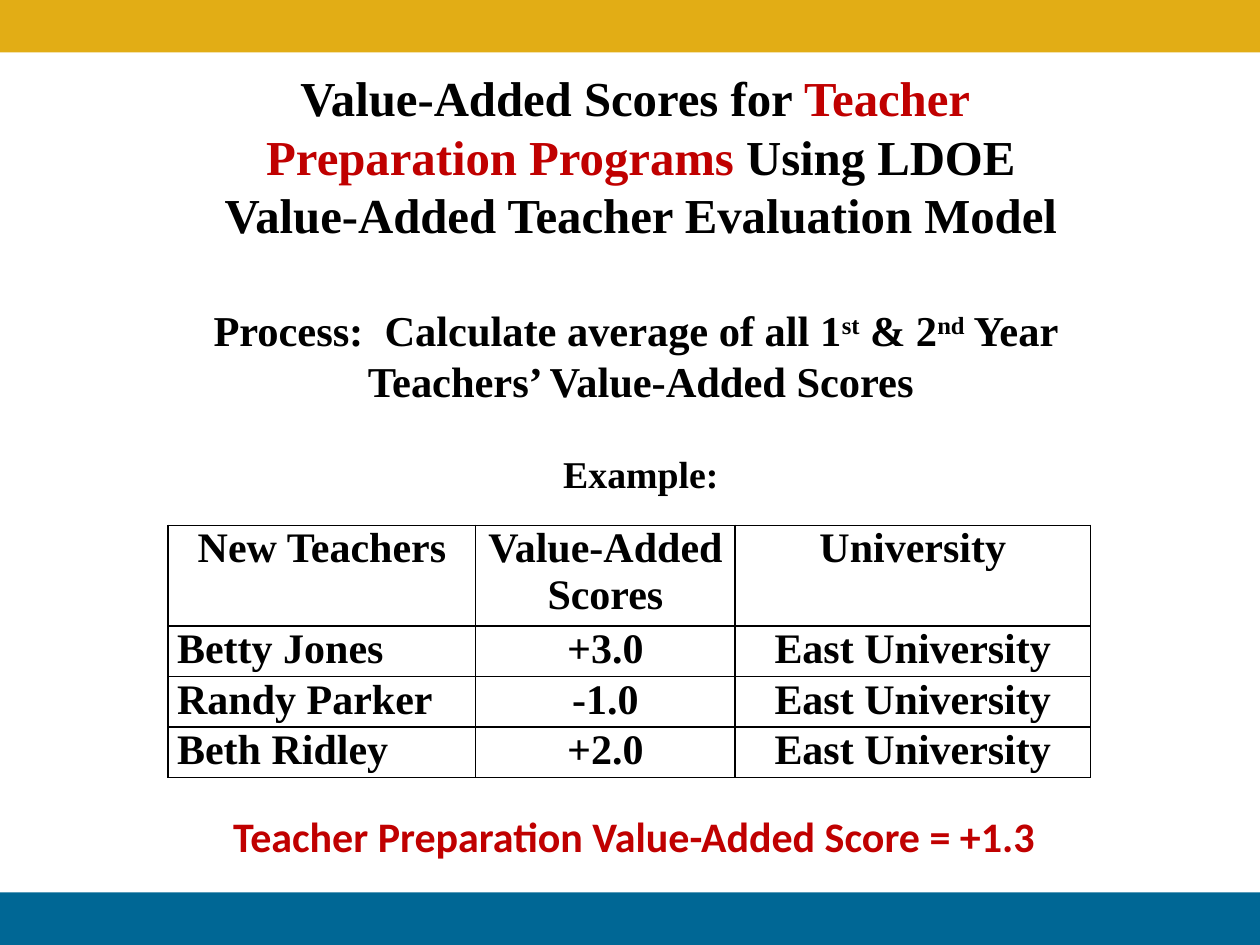
"""Build the slide on value-added scores for teacher preparation programs."""
from lxml import etree
from pptx import Presentation
from pptx.dml.color import RGBColor
from pptx.enum import shapes, text
from pptx.oxml import ns
from pptx.util import Cm, Pt

BLACK = RGBColor(0, 0, 0)
RED = RGBColor(0xC0, 0, 0)
GOLD = RGBColor(0xE2, 0xAD, 0x15)
BLUE = RGBColor(0, 0x67, 0x95)
WHITE = RGBColor(0xFF, 0xFF, 0xFF)
SERIF = "Times New Roman"
MID = text.PP_ALIGN.CENTER


def style(run, size, color=BLACK, face=SERIF):
    font = run.font
    font.name, font.size, font.bold = face, Pt(size), True
    font.color.rgb = color


def add_box(left, top, width, height):
    frame = slide.shapes.add_textbox(Cm(left), Cm(top), Cm(width), Cm(height)).text_frame
    frame.word_wrap = True
    frame.margin_left = frame.margin_right = frame.margin_top = frame.margin_bottom = 0
    return frame


deck = Presentation()
deck.slide_width, deck.slide_height = Cm(25.4), Cm(19.05)
slide = deck.slides.add_slide(deck.slide_layouts[6])

for top, color in ((0, GOLD), (17.99, BLUE)):
    band = slide.shapes.add_shape(shapes.MSO_SHAPE.RECTANGLE, 0, Cm(top), Cm(25.4), Cm(1.06))
    band.shadow.inherit = False
    band.fill.solid()
    band.fill.fore_color.rgb = color
    band.line.fill.background()

heads = (
    (27.9, 33.4, 0, (
        (("Value-Added Scores for ", BLACK, 0), ("Teacher ", RED, 0)),
        (("Preparation Programs ", RED, 0), ("Using LDOE", BLACK, 0)),
        (("Value-Added Teacher Evaluation Model", BLACK, 0),))),
    (24.3, 29.1, 35, (
        (("Process:  Calculate average of all 1", BLACK, 0), ("st", BLACK, 30000),
         (" & 2", BLACK, 0), ("nd", BLACK, 30000), (" Year ", BLACK, 0)),
        (("Teachers’ Value-Added Scores", BLACK, 0),))),
    (21.6, 26, 25, ((("Example:", BLACK, 0),),)),
)
frame = add_box(2.34, 1.37, 21.16, 8.8)
for num, (size, pitch, gap, lines) in enumerate(heads):
    para = frame.add_paragraph() if num else frame.paragraphs[0]
    para.alignment = MID
    para.line_spacing, para.space_before = Pt(pitch), Pt(gap)
    for row, line in enumerate(lines):
        if row:
            para.add_line_break()
        for words, color, lift in line:
            run = para.add_run()
            run.text = words
            style(run, size, color)
            if lift:
                run.font._element.set("baseline", str(lift))

data = (
    ("New Teachers", "Value-Added Scores", "University"),
    ("Betty Jones", "+3.0", "East University"),
    ("Randy Parker", "-1.0", "East University"),
    ("Beth Ridley", "+2.0", "East University"),
)
grid = slide.shapes.add_table(4, 3, Cm(3.39), Cm(10.59), Cm(18.59), Cm(4.78)).table
for col, width in zip(grid.columns, (6.2, 5.23, 7.16)):
    col.width = Cm(width)
for row, height in zip(grid.rows, (1.88, 0.94, 0.94, 1.02)):
    row.height = Cm(height)
for y, line in enumerate(data):
    for x, words in enumerate(line):
        cell = grid.cell(y, x)
        cell.margin_left = cell.margin_right = Cm(0.18)
        cell.margin_top = cell.margin_bottom = 0
        para = cell.text_frame.paragraphs[0]
        para.text = words
        if x or not y:
            para.alignment = MID
        style(para.runs[0], 24)
        props = cell._tc.get_or_add_tcPr()
        for side in ("a:lnL", "a:lnR", "a:lnT", "a:lnB"):
            edge = etree.SubElement(props, ns.qn(side), w=str(Pt(1)))
            fill = etree.SubElement(edge, ns.qn("a:solidFill"))
            etree.SubElement(fill, ns.qn("a:srgbClr"), val=str(BLACK))
        cell.fill.solid()
        cell.fill.fore_color.rgb = WHITE

para = add_box(4.7, 16.33, 17.5, 1.1).paragraphs[0]
para.text = "Teacher Preparation Value-Added Score = +1.3"
style(para.runs[0], 24, RED, "Calibri")

deck.save("out.pptx")
